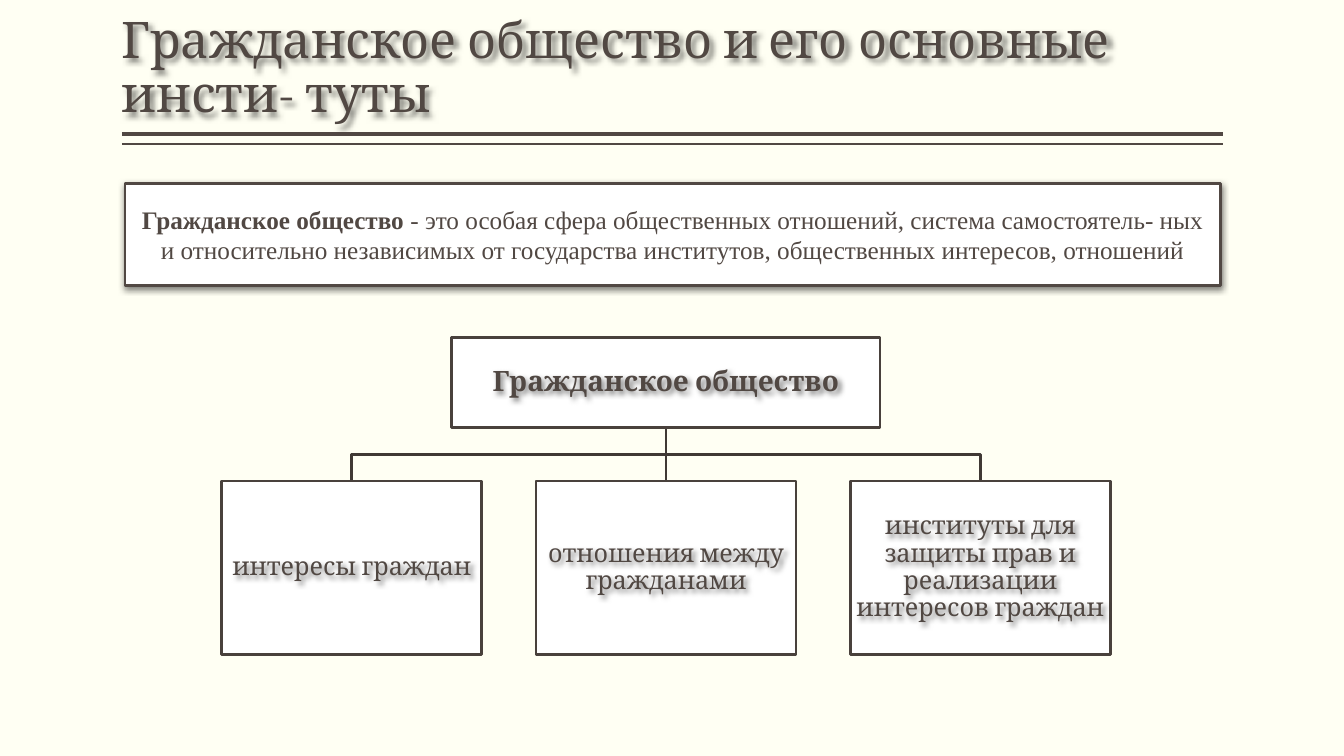
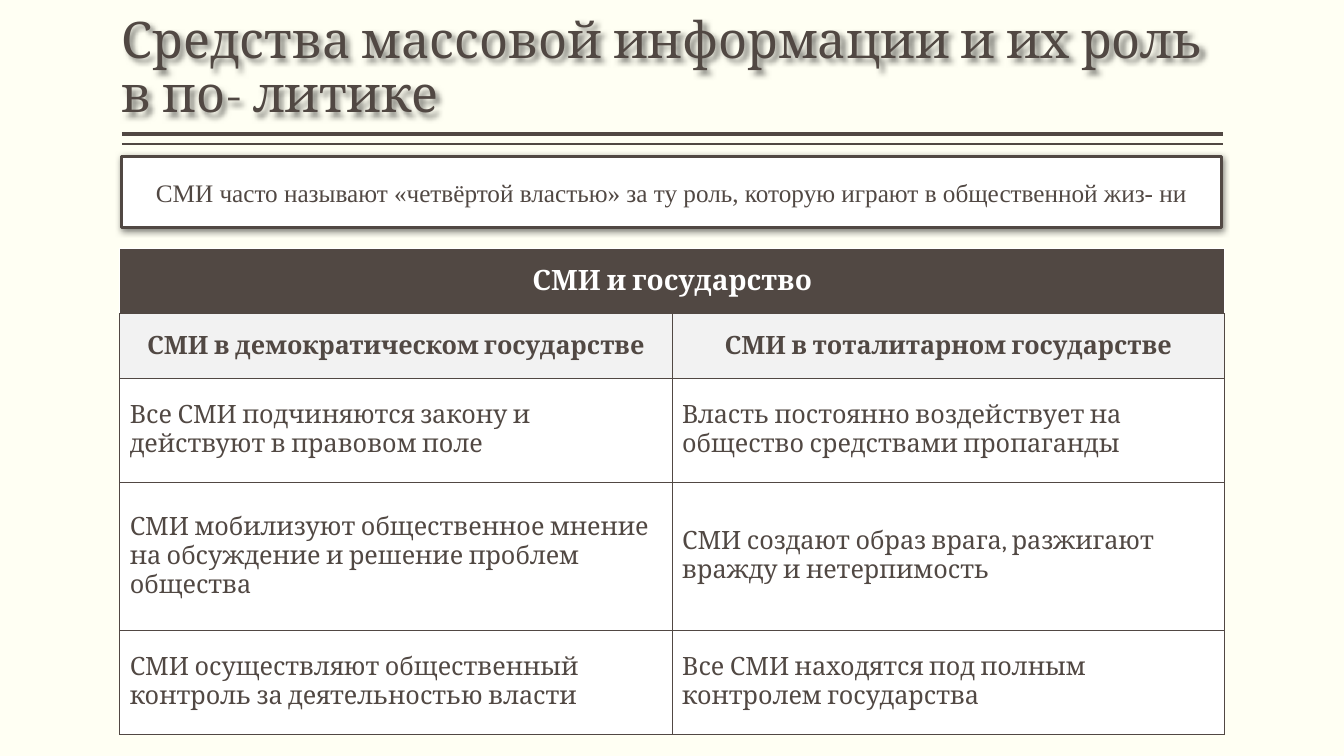
from dataclasses import dataclass

from lxml.etree import SubElement
from pptx import Presentation
from pptx.dml.color import RGBColor
from pptx.enum.shapes import MSO_CONNECTOR as CONNECTOR, MSO_SHAPE as SHAPE
from pptx.enum.text import MSO_ANCHOR as ANCHOR, MSO_AUTO_SIZE as AUTO_SIZE, PP_ALIGN as ALIGN
from pptx.oxml.ns import qn
from pptx.util import Cm, Pt

CREAM = RGBColor(0xFF, 0xFF, 0xF3)
WHITE = RGBColor(0xFF, 0xFF, 0xFF)
LIGHT = RGBColor(0xF2, 0xF2, 0xF2)
BROWN = RGBColor(0x51, 0x48, 0x43)
BOX_LINE = RGBColor(0x49, 0x41, 0x3C)
BRANCH = RGBColor(0x40, 0x39, 0x34)

SERIF, ROMAN = "Cambria", "Times New Roman"
LEFT, RIGHT = 3.07, 30.81


@dataclass(frozen=True)
class Box:
    """A rectangle in centimetres."""
    left: float
    top: float
    width: float
    height: float

    @property
    def middle(self) -> float:
        return self.left + self.width / 2

    @property
    def bottom(self) -> float:
        return self.top + self.height

    def lengths(self) -> tuple:
        return Cm(self.left), Cm(self.top), Cm(self.width), Cm(self.height)


@dataclass(frozen=True)
class Shadow:
    """Blur and distance in points, direction in degrees, opacity in percent."""
    blur: float
    distance: float
    direction: int
    opacity: int


@dataclass(frozen=True)
class Run:
    text: str
    bold: bool = False


@dataclass(frozen=True)
class TextStyle:
    font: str = SERIF
    size: int = 18
    color: RGBColor = BROWN
    align: ALIGN = ALIGN.CENTER
    anchor: ANCHOR = ANCHOR.MIDDLE
    spacing: float = 1.0
    margin_x: float = 0.25
    margin_y: float = 0.13


PANEL_SHADOW = Shadow(4.5, 1.5, 90, 50)
TEXT_SHADOW = Shadow(4, 3, 45, 50)
TITLE_STYLE = TextStyle(size=36, align=ALIGN.LEFT, anchor=ANCHOR.BOTTOM,
                        spacing=0.9, margin_x=0)
PANEL_STYLE = TextStyle(font=ROMAN)
NODE_STYLE = TextStyle(spacing=0.9, margin_x=0.03, margin_y=0.03)
ROOT_STYLE = TextStyle(size=20, spacing=0.9, margin_x=0.03, margin_y=0.03)

TITLE_BOX = Box(LEFT, 0.2, RIGHT - LEFT, 3.05)
RULES = ((3.38, 3), (3.63, 1))

ROOT_BOX = Box(11.38, 8.51, 10.8, 2.26)
CHILD_BOX = Box(5.59, 12.12, 6.55, 4.37)
CHILD_PITCH = 7.92
CHILDREN = (
    "интересы граждан",
    "отношения между гражданами",
    "институты для защиты прав и реализации интересов граждан",
)

TABLE_ROWS = (
    ("СМИ и государство", ""),
    ("СМИ в демократическом государстве", "СМИ в тоталитарном государстве"),
    ("Все СМИ подчиняются закону и действуют в правовом поле",
     "Власть постоянно воздействует на общество средствами пропаганды"),
    ("СМИ мобилизуют общественное мнение на обсуждение и решение проблем общества",
     "СМИ создают образ врага, разжигают вражду и нетерпимость"),
    ("СМИ осуществляют общественный контроль за деятельностью власти",
     "Все СМИ находятся под полным контролем государства"),
)
ROW_HEIGHTS = (1.63, 1.63, 2.62, 3.73, 2.62)
TABLE_BOX = Box(3.02, 6.27, 27.84, sum(ROW_HEIGHTS))


def set_attributes(target, **values) -> None:
    for name, value in values.items():
        setattr(target, name, value)


def write(tf, style: TextStyle, *runs: Run) -> None:
    p = tf.paragraphs[0]
    set_attributes(p, alignment=style.align, line_spacing=style.spacing)
    for run in runs:
        r = p.add_run()
        r.text = run.text
        set_attributes(r.font, name=style.font, size=Pt(style.size), bold=run.bold)
        r.font.color.rgb = style.color


def format_frame(tf, style: TextStyle) -> None:
    set_attributes(tf, word_wrap=True, auto_size=AUTO_SIZE.NONE, vertical_anchor=style.anchor,
                   margin_left=Cm(style.margin_x), margin_right=Cm(style.margin_x),
                   margin_top=Cm(style.margin_y), margin_bottom=Cm(style.margin_y))


def set_shadow(sp, shadow: Shadow) -> None:
    sp.shadow.inherit = False
    effects = sp.element.spPr.find(qn("a:effectLst"))
    outer = SubElement(effects, qn("a:outerShdw"), blurRad=str(Pt(shadow.blur)),
                       dist=str(Pt(shadow.distance)), dir=str(shadow.direction * 60000),
                       algn="t", rotWithShape="0")
    color = SubElement(outer, qn("a:srgbClr"), val="000000")
    SubElement(color, qn("a:alpha"), val=str(shadow.opacity * 1000))


def set_line(sp, color: RGBColor, width: float) -> None:
    sp.line.color.rgb = color
    sp.line.width = Pt(width)


def add_line(slide, x1: float, y1: float, x2: float, y2: float,
             color: RGBColor, width: float) -> None:
    line = slide.shapes.add_connector(CONNECTOR.STRAIGHT, Cm(x1), Cm(y1), Cm(x2), Cm(y2))
    set_line(line, color, width)
    SubElement(line.element.spPr, qn("a:effectLst"))


def add_rectangle(slide, box: Box, line_color: RGBColor):
    sp = slide.shapes.add_shape(SHAPE.RECTANGLE, *box.lengths())
    sp.shadow.inherit = False
    sp.fill.solid()
    sp.fill.fore_color.rgb = WHITE
    set_line(sp, line_color, 2)
    return sp


def add_panel(slide, box: Box, *runs: Run) -> None:
    sp = add_rectangle(slide, box, BROWN)
    set_shadow(sp, PANEL_SHADOW)
    format_frame(sp.text_frame, PANEL_STYLE)
    write(sp.text_frame, PANEL_STYLE, *runs)


def add_node(slide, box: Box, style: TextStyle, run: Run) -> None:
    """Draw a flat box with a separate label, so that only the text casts a shadow."""
    add_rectangle(slide, box, BOX_LINE)
    label = slide.shapes.add_textbox(*box.lengths())
    set_shadow(label, TEXT_SHADOW)
    format_frame(label.text_frame, style)
    write(label.text_frame, style, run)


def add_titled_slide(prs, title: str):
    slide = prs.slides.add_slide(prs.slide_layouts[5])
    slide.background.fill.solid()
    slide.background.fill.fore_color.rgb = CREAM
    for y, width in RULES:
        add_line(slide, LEFT, y, RIGHT, y, BROWN, width)
    sp = slide.shapes.title
    sp.left, sp.top, sp.width, sp.height = TITLE_BOX.lengths()
    set_shadow(sp, TEXT_SHADOW)
    format_frame(sp.text_frame, TITLE_STYLE)
    write(sp.text_frame, TITLE_STYLE, Run(title))
    return slide


def add_hierarchy(slide) -> None:
    boxes = [Box(CHILD_BOX.left + i * CHILD_PITCH, CHILD_BOX.top,
                 CHILD_BOX.width, CHILD_BOX.height) for i in range(len(CHILDREN))]
    first, center, last = boxes
    fork_y = (ROOT_BOX.bottom + CHILD_BOX.top) / 2

    add_line(slide, center.middle, ROOT_BOX.bottom, center.middle, center.top, BRANCH, 2)
    builder = slide.shapes.build_freeform(Cm(first.middle), Cm(first.top))
    corners = ((first.middle, fork_y), (last.middle, fork_y), (last.middle, last.top))
    builder.add_line_segments([(Cm(x), Cm(y)) for x, y in corners], close=False)
    fork = builder.convert_to_shape()
    fork.shadow.inherit = False
    fork.fill.background()
    set_line(fork, BRANCH, 2)

    add_node(slide, ROOT_BOX, ROOT_STYLE, Run("Гражданское общество", bold=True))
    for box, text in zip(boxes, CHILDREN):
        add_node(slide, box, NODE_STYLE, Run(text))


def set_borders(cell, **colors: RGBColor) -> None:
    """Set one-point borders by side: L, R, T, B; they must precede the cell's fill."""
    tc_pr = cell._tc.get_or_add_tcPr()
    for i, side in enumerate("LRTB"):
        ln = SubElement(tc_pr, qn(f"a:ln{side}"), w=str(Pt(1)))
        fill = SubElement(ln, qn("a:solidFill"))
        SubElement(fill, qn("a:srgbClr"), val=str(colors.get(side, BROWN)))
        tc_pr.insert(i, ln)


def add_media_table(slide) -> None:
    frame = slide.shapes.add_table(len(TABLE_ROWS), 2, *TABLE_BOX.lengths())
    table = frame.table
    for column in table.columns:
        column.width = Cm(TABLE_BOX.width / 2)
    for row, height in zip(table.rows, ROW_HEIGHTS):
        row.height = Cm(height)
    table.cell(0, 0).merge(table.cell(0, 1))

    header = TextStyle(size=20, color=WHITE)
    body = TextStyle(align=ALIGN.LEFT)
    looks = [(header, BROWN), (TextStyle(), LIGHT)] + [(body, WHITE)] * 3
    for i, (texts, (style, fill)) in enumerate(zip(TABLE_ROWS, looks)):
        for j, text in enumerate(texts):
            cell = table.cell(i, j)
            cell.fill.solid()
            cell.fill.fore_color.rgb = fill
            edges = dict.fromkeys("LRT", WHITE) if i == 0 else {}
            set_borders(cell, **edges)
            set_attributes(cell, vertical_anchor=style.anchor,
                           margin_left=Cm(style.margin_x), margin_right=Cm(style.margin_x),
                           margin_top=Cm(style.margin_y), margin_bottom=Cm(style.margin_y))
            if text:
                write(cell.text_frame, style, Run(text, bold=i < 2))


def build_society_slide(prs) -> None:
    slide = add_titled_slide(prs, "Гражданское общество и его основные инсти- туты")
    add_panel(slide, Box(3.15, 4.62, 27.61, 2.57),
              Run("Гражданское общество ", bold=True),
              Run("- это особая сфера общественных отношений, система самостоятель- ных "
                  "и относительно независимых от государства институтов, "
                  "общественных интересов, отношений"))
    add_hierarchy(slide)


def build_media_slide(prs) -> None:
    slide = add_titled_slide(prs, "Средства массовой информации и их роль в по- литике")
    add_panel(slide, Box(LEFT, 3.94, 27.71, 1.8),
              Run("СМИ часто называют «четвёртой властью» за ту роль, "
                  "которую играют в общественной жиз- ни"))
    add_media_table(slide)


def main() -> None:
    prs = Presentation()
    set_attributes(prs, slide_width=Cm(33.87), slide_height=Cm(19.05))
    build_society_slide(prs)
    build_media_slide(prs)
    prs.save("out.pptx")


if __name__ == "__main__":
    main()
